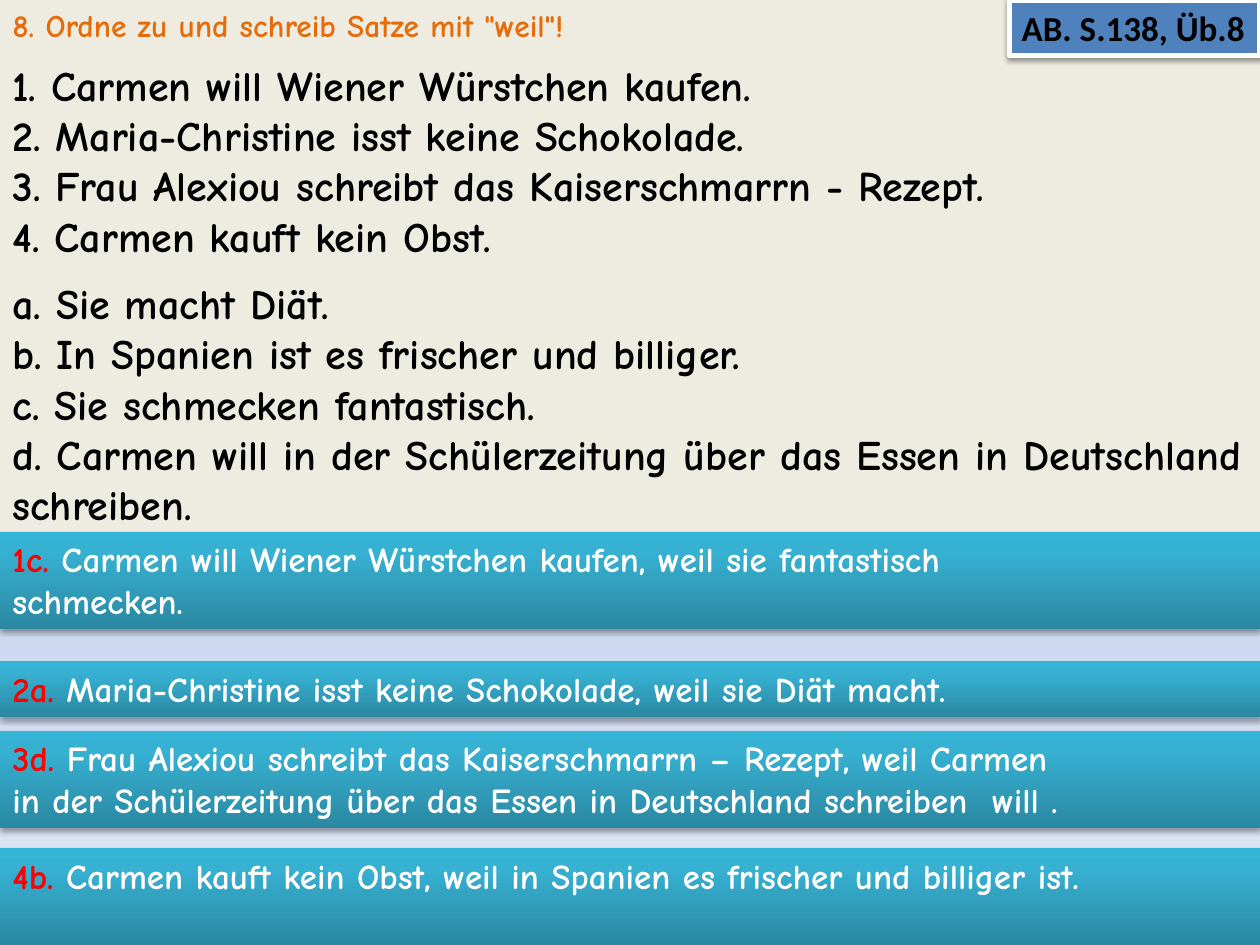
import pptx
import pptx.dml.color
import pptx.enum.shapes
import pptx.enum.text
import pptx.oxml
import pptx.oxml.ns
import pptx.util
from pptx.dml.color import RGBColor
from pptx.util import Inches

CREAM = RGBColor(0xEE, 0xEC, 0xE1)
ORANGE = RGBColor(0xE4, 0x6C, 0x0A)
BLACK = RGBColor(0x00, 0x00, 0x00)
WHITE = RGBColor(0xFF, 0xFF, 0xFF)
RED = RGBColor(0xFF, 0x00, 0x00)
BLUE = RGBColor(0x4F, 0x81, 0xBD)
TEALS = [(0, RGBColor(0x2A, 0x88, 0xA2)), (80, RGBColor(0x37, 0xB1, 0xD2)),
         (100, RGBColor(0x34, 0xB4, 0xD6))]
SKY = [(0, RGBColor(0x9A, 0xB5, 0xE4)), (50, RGBColor(0xC2, 0xD1, 0xED)),
       (100, RGBColor(0xE1, 0xE8, 0xF5))]

STATEMENTS = [
    "1. Carmen will Wiener Würstchen kaufen.",
    "2. Maria-Christine isst keine Schokolade.",
    "3. Frau Alexiou schreibt das Kaiserschmarrn - Rezept.",
    "4. Carmen kauft kein Obst.",
]
REASONS = [
    "a. Sie macht Diät.",
    "b. In Spanien ist es frischer und billiger.",
    "c. Sie schmecken fantastisch.",
    "d. Carmen will in der Schülerzeitung über das Essen in Deutschland schreiben.",
]
# Top, height, label and lines of each answer
ANSWERS = [
    (4.22, 0.77, "1c.", ["Carmen will Wiener Würstchen kaufen, weil sie fantastisch",
                         "schmecken."]),
    (5.25, 0.44, "2a.", ["Maria-Christine isst keine Schokolade, weil sie Diät macht."]),
    (5.8, 0.77, "3d.", ["Frau Alexiou schreibt das Kaiserschmarrn – Rezept, weil Carmen",
                        "in der Schülerzeitung über das Essen in Deutschland schreiben  will ."]),
    (6.73, 0.77, "4b.", ["Carmen kauft kein Obst, weil in Spanien es frischer und billiger ist."]),
]


def write(paragraph, text, size=20, color=BLACK, font="Comic Neue"):
    paragraph.alignment = pptx.enum.text.PP_ALIGN.LEFT
    run = paragraph.add_run()
    run.text = text
    run.font.name = font
    run.font.size = pptx.util.Pt(size)
    run.font.bold = True
    run.font.color.rgb = color


def set_gradient(fill, element, stops, angle):
    """Fill with any number of (percent, colour) stops."""
    fill.gradient()
    fill.gradient_angle = angle
    stop_list = element.find(".//" + pptx.oxml.ns.qn("a:gsLst"))
    for old_stop in list(stop_list):
        stop_list.remove(old_stop)
    for percent, color in stops:
        stop_list.append(pptx.oxml.parse_xml(
            f'<a:gs {pptx.oxml.ns.nsdecls("a")} pos="{percent * 1000}">'
            f'<a:srgbClr val="{color}"/></a:gs>'))


def set_shadow(shape, opacity, distance):
    shape.shadow.inherit = False
    effects = shape._element.spPr.find(pptx.oxml.ns.qn("a:effectLst"))
    effects.append(pptx.oxml.parse_xml(
        f'<a:outerShdw {pptx.oxml.ns.nsdecls("a")} blurRad="{pptx.util.Pt(3.1)}" '
        f'dist="{pptx.util.Pt(distance)}" dir="5400000" rotWithShape="0">'
        f'<a:srgbClr val="{BLACK}"><a:alpha val="{opacity * 1000}"/></a:srgbClr>'
        '</a:outerShdw>'))


class ExerciseSlide:
    def __init__(self, presentation):
        self.slide = presentation.slides.add_slide(presentation.slide_layouts[5])
        set_gradient(self.slide.background.fill, self.slide._element, SKY, 270)

    def prepare_frame(self, shape, wrap=True):
        frame = shape.text_frame
        frame.word_wrap = wrap
        frame.auto_size = pptx.enum.text.MSO_AUTO_SIZE.NONE
        frame.vertical_anchor = pptx.enum.text.MSO_ANCHOR.TOP
        return frame

    def add_title(self, text, height):
        title = self.slide.shapes.title
        title.left, title.top = Inches(0), Inches(0)
        title.width, title.height = Inches(10), Inches(height)
        title.fill.solid()
        title.fill.fore_color.rgb = CREAM
        write(self.prepare_frame(title).paragraphs[0], text, size=18, color=ORANGE)

    def add_sentences(self, groups, top, height, gap):
        box = self.slide.shapes.add_textbox(
            Inches(0), Inches(top), Inches(10), Inches(height))
        frame = self.prepare_frame(box)
        paragraph = frame.paragraphs[0]
        for group in groups:
            for index, sentence in enumerate(group):
                if paragraph.runs:
                    paragraph = frame.add_paragraph()
                    if index == 0:
                        paragraph.space_before = pptx.util.Pt(gap)
                write(paragraph, sentence, size=24)

    def add_rectangle(self, left, top, width, height):
        return self.slide.shapes.add_shape(
            pptx.enum.shapes.MSO_SHAPE.RECTANGLE,
            Inches(left), Inches(top), Inches(width), Inches(height))

    def add_answer(self, top, height, label, lines):
        bar = self.add_rectangle(0, top, 10, height)
        set_gradient(bar.fill, bar._element, TEALS, 90)
        bar.line.fill.background()
        set_shadow(bar, opacity=35, distance=1.8)
        frame = self.prepare_frame(bar)
        paragraph = frame.paragraphs[0]
        write(paragraph, label + " ", color=RED)
        write(paragraph, lines[0], color=WHITE)
        for line in lines[1:]:
            write(frame.add_paragraph(), line, color=WHITE)

    def add_badge(self, text):
        badge = self.add_rectangle(8.01, 0, 1.99, 0.44)
        badge.fill.solid()
        badge.fill.fore_color.rgb = BLUE
        badge.line.color.rgb = WHITE
        badge.line.width = pptx.util.Pt(3)
        set_shadow(badge, opacity=38, distance=1.6)
        frame = self.prepare_frame(badge, wrap=False)
        write(frame.paragraphs[0], text, font="Calibri")


def main():
    presentation = pptx.Presentation()
    presentation.slide_width = Inches(10)
    presentation.slide_height = Inches(7.5)
    exercise = ExerciseSlide(presentation)

    # Task panel
    exercise.add_title('8. Ordne zu und schreib Satze mit "weil"!', height=4.29)
    exercise.add_sentences([STATEMENTS, REASONS], top=0.42, height=3.87, gap=9.5)

    # Solutions
    for answer in ANSWERS:
        exercise.add_answer(*answer)

    # Workbook reference
    exercise.add_badge("AB. S.138, Üb.8")

    presentation.save("out.pptx")


if __name__ == "__main__":
    main()
